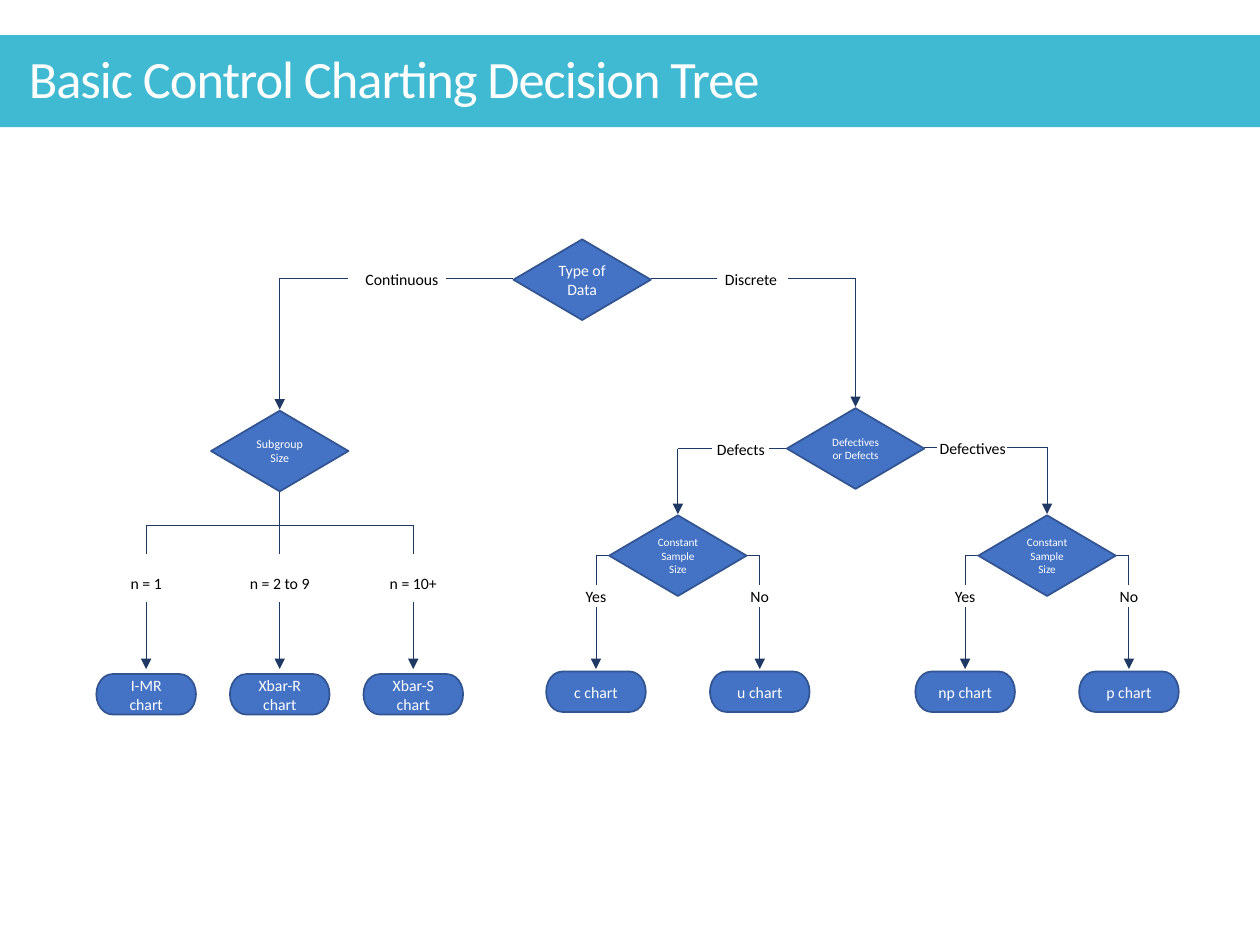
from pptx import Presentation
from pptx.dml.color import RGBColor as RGB
from pptx.enum.shapes import MSO_CONNECTOR as CONN, MSO_SHAPE as SHAPE
from pptx.enum.text import MSO_ANCHOR as ANCHOR, PP_ALIGN as ALIGN
from pptx.oxml.ns import qn
from pptx.util import Inches, Pt
from lxml.etree import SubElement

# Content: centre x, top, text, type size
TITLE = "Basic Control Charting Decision Tree"
ROOT = (4.62, 1.9, "Type of Data", 9)
GROUP = (2.22, 3.26, "Subgroup Size", 6.8)
DEFECT = (6.79, 3.24, "Defectives or Defects", 6.4)
SAMPLES = [(x, 4.09, "Constant Sample Size", 6.4) for x in (5.38, 8.31)]
# Source, target, label, label centre, gap in the line, line y
FORKS = [
    (ROOT, GROUP, "Continuous", 3.19, (3.54, 2.76), 2.21),
    (ROOT, DEFECT, "Discrete", 5.96, (5.69, 6.25), 2.21),
    (DEFECT, SAMPLES[0], "Defects", 5.88, (6.1, 5.65), 3.56),
    (DEFECT, SAMPLES[1], "Defectives", 7.72, (7.44, 7.99), 3.55),
]
SIZES = [("n = 1", "I-MR\nchart"), ("n = 2 to 9", "Xbar-R chart"),
         ("n = 10+", "Xbar-S chart")]
ANSWERS = [("Yes", "No"), ("Yes", "No")]
CHARTS = [("c chart", "u chart"), ("np chart", "p chart")]

THEME = {
    "font": "Calibri", "band": RGB(0x40, 0xBA, 0xD2),
    "fill": RGB(0x44, 0x72, 0xC4), "edge": RGB(0x32, 0x54, 0x91),
    "line": RGB(0x20, 0x38, 0x64), "dark": RGB(0, 0, 0),
    "light": RGB(255, 255, 255), "title": 30, "body": 9,
}
NODE_W, NODE_H = 1.09, 0.64
LEAF_W, LEAF_H = 0.79, 0.32
TAG_W, TAG_H = 0.9, 0.25
STEP = 1.06    # between subgroup leaves
REACH = 0.65   # from a sample node to its leaves

deck = Presentation()
deck.slide_width, deck.slide_height = Inches(10), Inches(7.5)
slide = deck.slides.add_slide(deck.slide_layouts[6])


def write(shape, text, size, tone, pad, align=ALIGN.CENTER):
    frame = shape.text_frame
    sides = ("left", "top", "right", "bottom")
    form = {f"margin_{s}": Inches(p) for s, p in zip(sides, pad)}
    form.update(word_wrap=True, vertical_anchor=ANCHOR.MIDDLE)
    for key, val in form.items():
        setattr(frame, key, val)
    for i, part in enumerate(text.split("\n")):
        para = frame.paragraphs[0] if i == 0 else frame.add_paragraph()
        para.alignment = align
        run = para.add_run()
        run.text = part
        look = {"name": THEME["font"], "size": Pt(size)}
        for key, val in look.items():
            setattr(run.font, key, val)
        run.font.color.rgb = THEME[tone]


def block(kind, box, fill, edge=None):
    shape = slide.shapes.add_shape(kind, *map(Inches, box))
    shape.shadow.inherit = False
    shape.fill.solid()
    shape.fill.fore_color.rgb = THEME[fill]
    if edge:
        shape.line.color.rgb = THEME[edge]
        shape.line.width = Pt(1)
    else:
        shape.line.fill.background()
    return shape


def step(kind, mid, top, wide, high, text, size):
    shape = block(kind, (mid - wide / 2, top, wide, high), "fill", "edge")
    write(shape, text, size, "light", (0.07, 0.04, 0.07, 0.04))


def node(mid, top, text, size):
    step(SHAPE.FLOWCHART_DECISION, mid, top, NODE_W, NODE_H, text, size)


def leaf(mid, top, text):
    step(SHAPE.FLOWCHART_TERMINATOR, mid, top, LEAF_W, LEAF_H, text,
         THEME["body"])


def tag(mid, top, text):
    box = (mid - TAG_W / 2, top, TAG_W, TAG_H)
    shape = slide.shapes.add_textbox(*map(Inches, box))
    write(shape, text, THEME["body"], "dark", (0, 0.05, 0, 0.05))


def rule(x1, y1, x2, y2, arrow=False):
    line = slide.shapes.add_connector(
        CONN.STRAIGHT, *map(Inches, (x1, y1, x2, y2)))
    line.line.color.rgb = THEME["line"]
    line.line.width = Pt(0.5)
    props = line._element.spPr
    if arrow:
        SubElement(props.find(qn("a:ln")), qn("a:tailEnd"), type="triangle")
    SubElement(props, qn("a:effectLst"))


# Upper forks: two stubs around a label, then an arrow down
for start, end, text, mid, gap, y in FORKS:
    side = 1 if end[0] > start[0] else -1
    rule(start[0] + side * NODE_W / 2, y, gap[0], y)
    rule(gap[1], y, end[0], y)
    rule(end[0], y, end[0], end[1] - 0.01, True)
    tag(mid, y - 0.12, text)

# Subgroup sizes
rule(GROUP[0] - STEP, 4.17, GROUP[0] + STEP, 4.17)
for i, (text, chart) in enumerate(SIZES):
    x = GROUP[0] + (i - 1) * STEP
    rule(x, 3.89 if i == 1 else 4.17, x, 4.4)
    tag(x, 4.5, text)
    rule(x, 4.78, x, 5.31, True)
    leaf(x, 5.35, chart)

# Sample size answers
for spot, words, charts in zip(SAMPLES, ANSWERS, CHARTS):
    for side, text, chart in zip((-1, 1), words, charts):
        x = spot[0] + side * REACH
        rule(spot[0] + side * NODE_W / 2, 4.41, x, 4.41)
        rule(x, 4.41, x, 4.64)
        tag(x, 4.61, text)
        rule(x, 4.82, x, 5.31, True)
        leaf(x, 5.33, chart)

# Decisions
for spot in (ROOT, GROUP, DEFECT, *SAMPLES):
    node(*spot)

# Title band
band = block(SHAPE.RECTANGLE, (0, 0.28, 10, 0.73), "band")
write(band, TITLE, THEME["title"], "light", (0.23, 0.05, 0.1, 0.05),
      ALIGN.LEFT)
head = band.text_frame.paragraphs[0]
head.line_spacing = 0.9
head.runs[0].font._element.set("spc", "-60")

deck.save("out.pptx")
